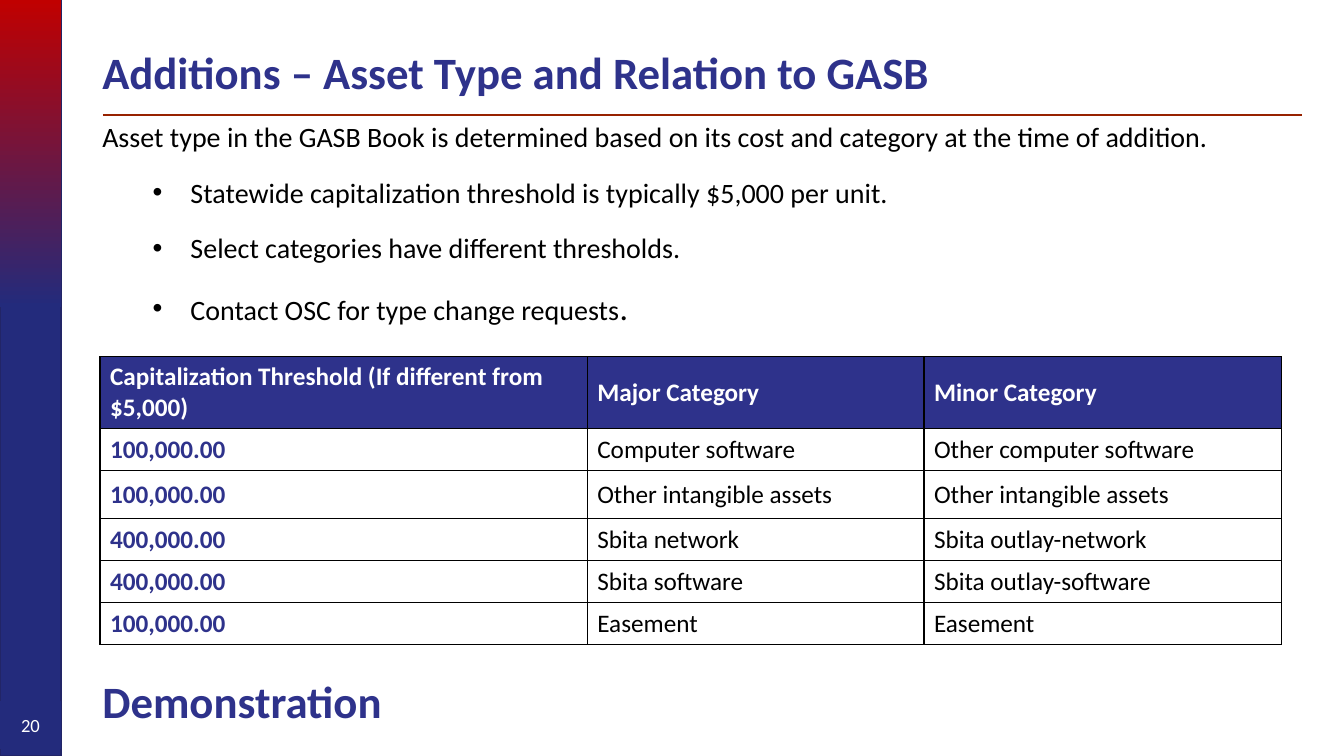
from lxml.etree import SubElement
from pptx import Presentation
from pptx.dml.color import RGBColor
from pptx.enum.shapes import MSO_CONNECTOR, MSO_SHAPE
from pptx.enum.text import MSO_ANCHOR, MSO_AUTO_SIZE, PP_ALIGN
from pptx.oxml.ns import qn
from pptx.util import Pt

COLORS = {"navy": "232B7C", "edge": "222567", "indigo": "2E328B", "red": "C00000",
          "rule": "972200", "black": "000000", "white": "FFFFFF"}


def rgb(name):
    return RGBColor.from_string(COLORS[name])


class Deck:
    font = "Calibri"

    def __init__(self, width, height):
        self.prs = Presentation()
        self.prs.slide_width, self.prs.slide_height = Pt(width), Pt(height)
        self.s = self.prs.slides.add_slide(self.prs.slide_layouts[6])

    def run(self, p, text, size, color="black", bold=False):
        r = p.add_run()
        r.text = text
        r.font.name, r.font.size, r.font.bold = self.font, Pt(size), bold
        r.font.color.rgb = rgb(color)

    def rect(self, x, y, w, h, fill=None, line=None, weight=1):
        sp = self.s.shapes.add_shape(MSO_SHAPE.RECTANGLE, Pt(x), Pt(y), Pt(w), Pt(h))
        sp.shadow.inherit = False
        if isinstance(fill, tuple):
            sp.fill.gradient()
            sp.fill.gradient_angle = 270
            for stop, name, position in zip(sp.fill.gradient_stops, fill, (0, 1)):
                stop.color.rgb = rgb(name)
                stop.position = position
        elif fill:
            sp.fill.solid()
            sp.fill.fore_color.rgb = rgb(fill)
        else:
            sp.fill.background()
        if line:
            sp.line.color.rgb = rgb(line)
            sp.line.width = Pt(weight)
        else:
            sp.line.fill.background()
        return sp

    def rule(self, x1, x2, y, color, weight):
        c = self.s.shapes.add_connector(MSO_CONNECTOR.STRAIGHT, Pt(x1), Pt(y), Pt(x2), Pt(y))
        c.line.color.rgb = rgb(color)
        c.line.width = Pt(weight)
        SubElement(c._element.spPr, qn("a:effectLst"))

    def text(self, x, y, w, h, anchor=MSO_ANCHOR.TOP, grow=False):
        tf = self.s.shapes.add_textbox(Pt(x), Pt(y), Pt(w), Pt(h)).text_frame
        tf.word_wrap = True
        tf.vertical_anchor = anchor
        tf.auto_size = MSO_AUTO_SIZE.SHAPE_TO_FIT_TEXT if grow else MSO_AUTO_SIZE.NONE
        return tf

    def bullet(self, p, left, hang):
        p.level = 1
        pPr = p._p.get_or_add_pPr()
        pPr.set("marL", str(Pt(left)))
        pPr.set("indent", str(-Pt(hang)))
        SubElement(pPr, qn("a:buFont"), typeface="Arial")
        SubElement(pPr, qn("a:buChar"), char="•")

    def cell(self, cell, text, fill, color, bold):
        tcPr = cell._tc.get_or_add_tcPr()
        for side in ("lnL", "lnR", "lnT", "lnB"):
            ln = SubElement(tcPr, qn("a:" + side), w=str(Pt(1)))
            SubElement(SubElement(ln, qn("a:solidFill")), qn("a:srgbClr"), val=COLORS["black"])
        cell.fill.solid()
        cell.fill.fore_color.rgb = rgb(fill)
        cell.vertical_anchor = MSO_ANCHOR.MIDDLE
        self.run(cell.text_frame.paragraphs[0], text, 18, color, bold)

    def table(self, x, y, widths, heights, rows):
        tbl = self.s.shapes.add_table(len(rows), len(widths), Pt(x), Pt(y),
                                      Pt(sum(widths)), Pt(sum(heights))).table
        tbl.first_row = tbl.horz_banding = False
        for column, width in zip(tbl.columns, widths):
            column.width = Pt(width)
        for i, (row, height) in enumerate(zip(rows, heights)):
            tbl.rows[i].height = Pt(height)
            for j, value in enumerate(row):
                if i == 0:
                    style = ("indigo", "white", True)
                else:
                    style = ("white", "black" if j else "indigo", j == 0)
                self.cell(tbl.cell(i, j), value, *style)


def main():
    deck = Deck(960, 540)

    # Side band and title rule
    deck.rect(0, 0, 43.5, 540, "navy", "edge")
    deck.rect(0, 0, 43.5, 219, ("red", "navy"))
    deck.rule(73.5, 930, 82, "rule", 1.5)

    # Title
    p = deck.text(66, 28.8, 816.5, 49.7, MSO_ANCHOR.MIDDLE).paragraphs[0]
    p.line_spacing = 0.9
    deck.run(p, "Additions – Asset Type and Relation to GASB", 32, "indigo", True)

    # Introduction and bullets
    tf = deck.text(66, 78.5, 849.6, 158.4, grow=True)
    lines = [
        [("Asset type in the GASB Book is determined based on its cost and category "
          "at the time of addition.", 20)],
        [("Statewide capitalization threshold is typically $5,000 per unit.", 20)],
        [("Select categories have different thresholds.", 20)],
        [("Contact OSC for type change requests", 20), (".", 24)],
    ]
    for i, runs in enumerate(lines):
        p = tf.add_paragraph() if i else tf.paragraphs[0]
        p.line_spacing = 1.15
        p.space_after = Pt(6)
        if i:
            p.space_before = Pt(6)
            deck.bullet(p, 63, 27)
        for words, size in runs:
            deck.run(p, words, size)

    # Threshold table
    deck.table(71.5, 254.9, [348, 240.5, 255.6], [51.2, 30, 34.5, 30, 30, 30], [
        ["Capitalization Threshold (If different from $5,000)", "Major Category", "Minor Category"],
        ["100,000.00", "Computer software", "Other computer software"],
        ["100,000.00", "Other intangible assets", "Other intangible assets"],
        ["400,000.00", "Sbita network", "Sbita outlay-network"],
        ["400,000.00", "Sbita software", "Sbita outlay-software"],
        ["100,000.00", "Easement", "Easement"],
    ])

    # Closing heading
    p = deck.text(66, 478, 414, 46, grow=True).paragraphs[0]
    deck.run(p, "Demonstration", 32, "indigo", True)

    # Slide number
    sp = deck.rect(0, 501, 43.5, 34, line="navy", weight=0.75)
    sp.text_frame.vertical_anchor = MSO_ANCHOR.MIDDLE
    p = sp.text_frame.paragraphs[0]
    p.alignment = PP_ALIGN.CENTER
    deck.run(p, "20", 13.3, "white")

    deck.prs.save("out.pptx")


if __name__ == "__main__":
    main()
